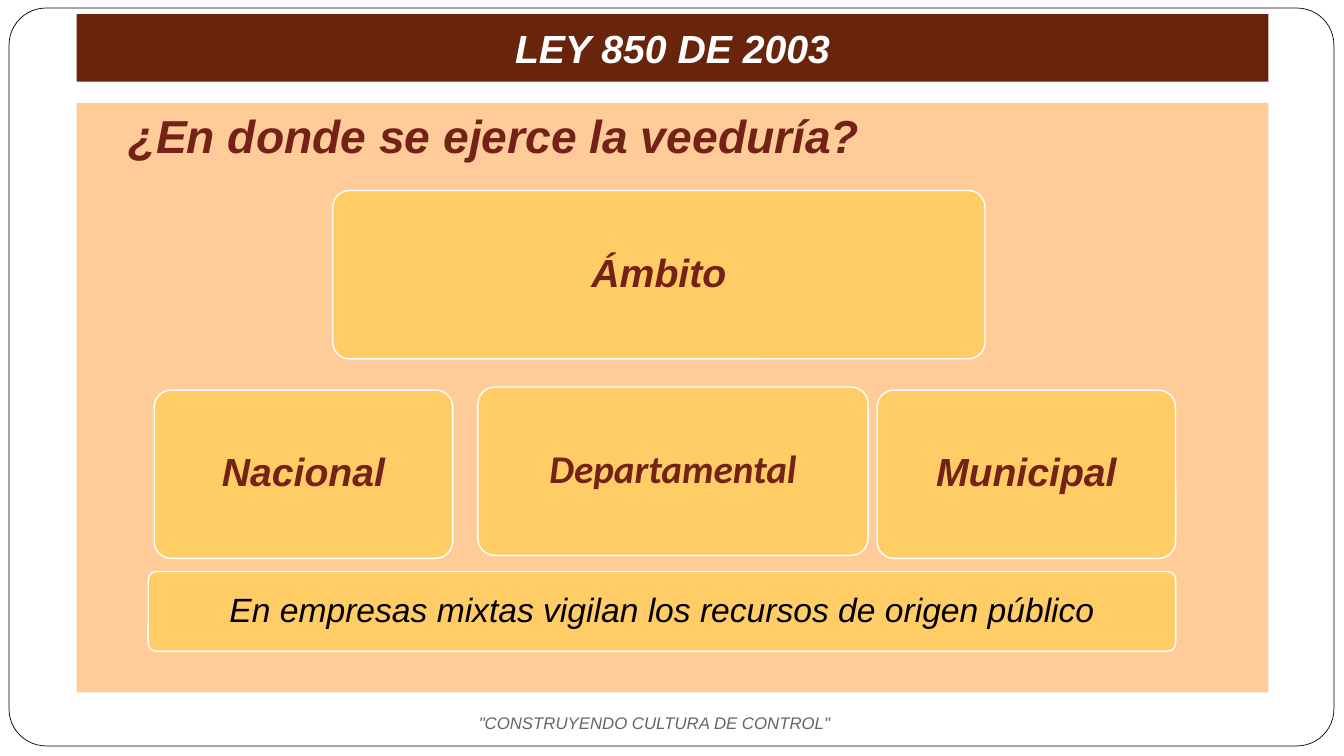
from pptx import Presentation
from pptx.dml.color import RGBColor
from pptx.enum.shapes import MSO_SHAPE
from pptx.enum.text import MSO_ANCHOR, MSO_AUTO_SIZE, PP_ALIGN
from pptx.util import Pt

PX = 9144  # 100 px to the inch
RECT, ROUND = MSO_SHAPE.RECTANGLE, MSO_SHAPE.ROUNDED_RECTANGLE
TOP, MIDDLE, BOTTOM = MSO_ANCHOR.TOP, MSO_ANCHOR.MIDDLE, MSO_ANCHOR.BOTTOM
LEFT, CENTER = PP_ALIGN.LEFT, PP_ALIGN.CENTER
FIXED = MSO_AUTO_SIZE.NONE

COLORS = {
    "white": "FFFFFF",
    "black": "000000",
    "brown": "69240C",
    "red": "742217",
    "peach": "FFCC99",
    "gold": "FFCC66",
    "gray": "696464",
}


def color(name):
    return RGBColor.from_string(COLORS[name])


def paint(shape, fill, line=None, width=1):
    shape.fill.solid()
    shape.fill.fore_color.rgb = color(fill)
    if line:
        shape.line.color.rgb = color(line)
        shape.line.width = Pt(width)
    else:
        shape.line.fill.background()


def place(shape, box):
    shape.left, shape.top, shape.width, shape.height = [n * PX for n in box]


def write(shape, text, size, ink, bold=True, font="Arial",
          align=CENTER, anchor=MIDDLE, pads=(10, 5, 10, 5)):
    """Set one italic line of text; pads are left, top, right, bottom in px."""
    frame = shape.text_frame
    frame.auto_size = FIXED
    frame.word_wrap = True
    frame.vertical_anchor = anchor
    (frame.margin_left, frame.margin_top,
     frame.margin_right, frame.margin_bottom) = [n * PX for n in pads]
    para = frame.paragraphs[0]
    para.alignment = align
    run = para.add_run()
    run.text = text
    run.font.name = font
    run.font.size = Pt(size)
    run.font.bold = bold
    run.font.italic = True
    run.font.color.rgb = color(ink)
    return para


def add_box(slide, kind, box, fill, line=None, width=1, round_by=0.1):
    shape = slide.shapes.add_shape(kind, *[n * PX for n in box])
    shape.shadow.inherit = False
    if kind == ROUND:
        shape.adjustments[0] = round_by
    paint(shape, fill, line, width)
    return shape


def add_card(slide, box, text, size=28, ink="red", bold=True, font="Arial"):
    card = add_box(slide, ROUND, box, "gold", "white")
    para = write(card, text, size, ink, bold, font, pads=(12, 12, 12, 12))
    para.line_spacing = 0.9


def add_frame(slide):
    frame = add_box(slide, ROUND, (9, 8, 1314, 732), "white", "black", 0.5, 0.05)
    slide.shapes._spTree.insert(2, frame._element)  # behind the title


def add_title(slide, text):
    title = slide.shapes.title
    place(title, (76, 14, 1182, 67))
    paint(title, "brown")
    write(title, text, 28, "white", anchor=BOTTOM, pads=(10, 5, 10, 10))


def add_panel(slide, text):
    panel = add_box(slide, RECT, (76, 102, 1182, 585), "peach")
    write(panel, text, 33, "red", align=LEFT, anchor=TOP, pads=(51, 5, 10, 5))


def add_motto(slide, text):
    box = slide.shapes.add_textbox(*[n * PX for n in (465, 699, 399, 37)])
    write(box, text, 12, "gray", bold=False, align=LEFT)


def main():
    deck = Presentation()
    deck.slide_width, deck.slide_height = 1333 * PX, 750 * PX
    slide = deck.slides.add_slide(deck.slide_layouts[5])
    add_frame(slide)
    add_title(slide, "LEY 850 DE 2003")
    add_panel(slide, "¿En donde se ejerce la veeduría?")
    add_card(slide, (147, 567, 1019, 79),
             "En empresas mixtas vigilan los recursos de origen público",
             24, "black", False)
    add_card(slide, (330, 189, 647, 167), "Ámbito")
    add_card(slide, (153, 387, 296, 167), "Nacional")
    add_card(slide, (474, 384, 387, 167), "Departamental", font="Calibri")
    add_card(slide, (870, 387, 296, 167), "Municipal")
    add_motto(slide, '"CONSTRUYENDO CULTURA DE CONTROL"')
    deck.save("out.pptx")


if __name__ == "__main__":
    main()
